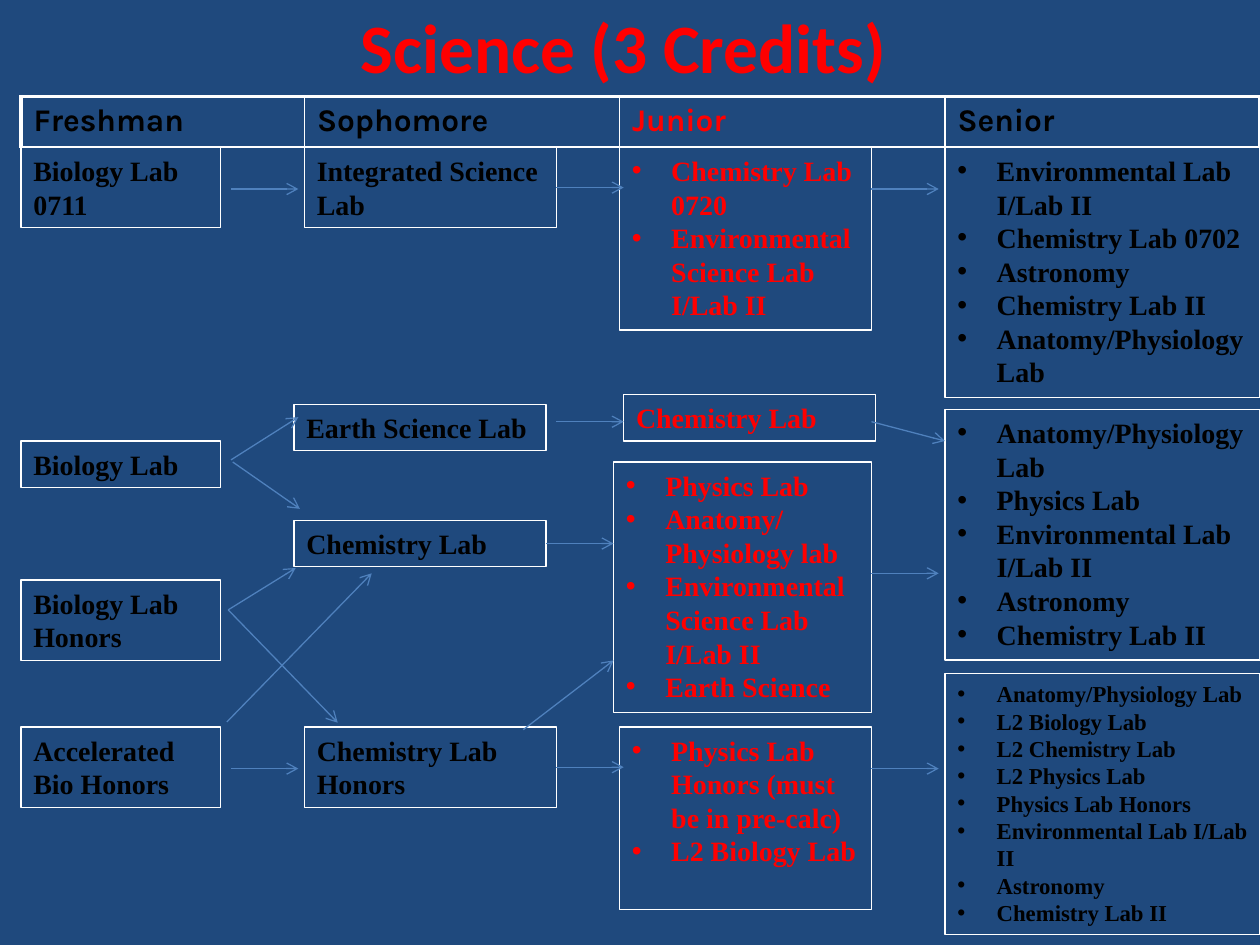
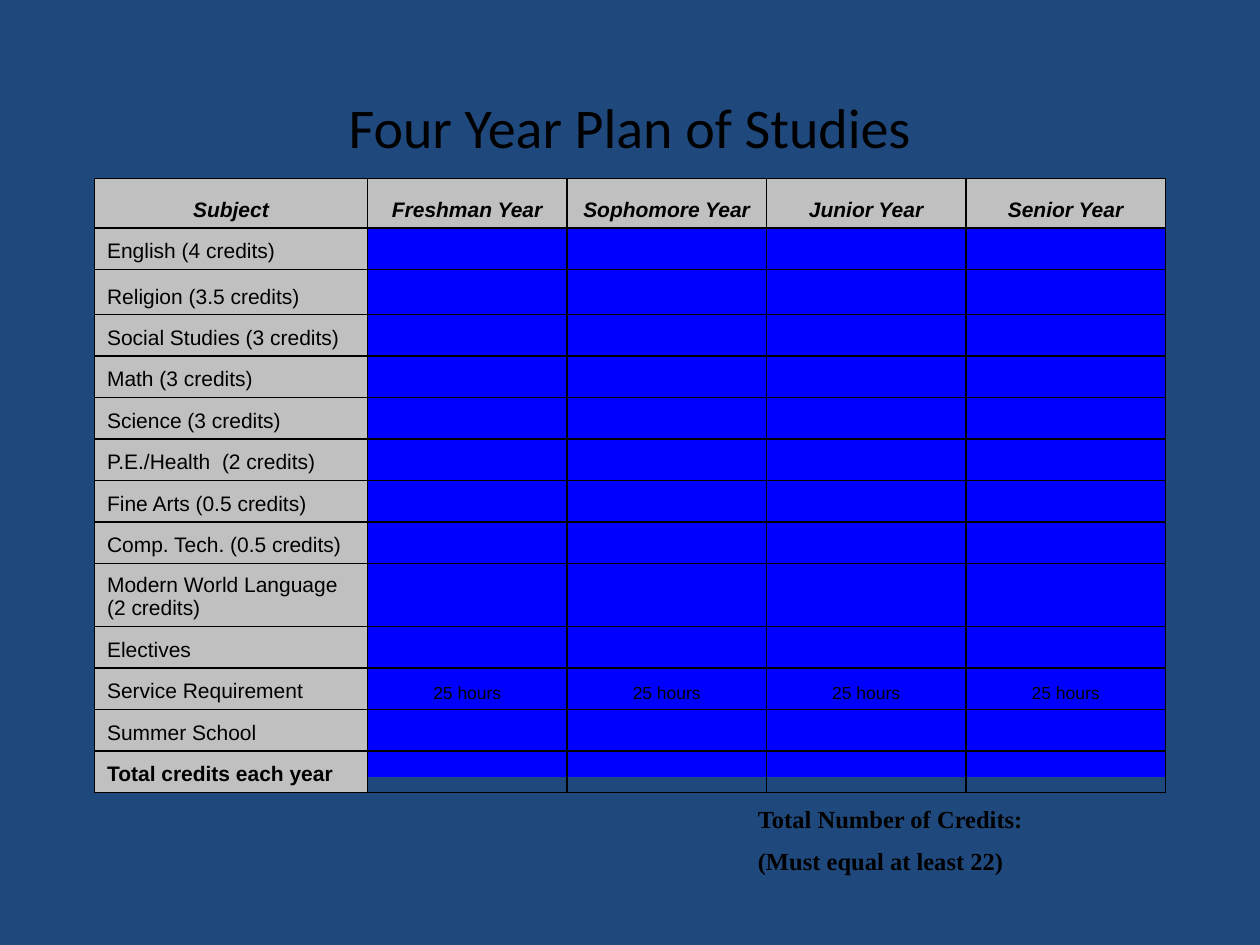
"""Build two course-planning slides: the science pathway and the four-year plan."""
from dataclasses import dataclass, replace
from typing import NamedTuple, Optional

from lxml import etree
from pptx import Presentation
from pptx import util as u
from pptx.dml.color import RGBColor
from pptx.enum import shapes, text
from pptx.oxml.ns import qn

NAVY, BLUE, STEEL, SILVER = "1F497D", "0000FF", "4F81BD", "C0C0C0"
RED, BLACK, WHITE = "FF0000", "000000", "FFFFFF"
LEFT, CENTER = text.PP_ALIGN.LEFT, text.PP_ALIGN.CENTER
TOP, MIDDLE, BOTTOM = (text.MSO_ANCHOR.TOP, text.MSO_ANCHOR.MIDDLE,
                       text.MSO_ANCHOR.BOTTOM)


@dataclass(frozen=True)
class Style:
    """Font settings of a run."""
    font: str
    size: float
    color: str = BLACK
    bold: bool = False
    italic: bool = False


class Course(NamedTuple):
    """A bordered box listing one or more courses."""
    key: str
    left: float
    top: float
    width: float
    height: float
    lines: list[str]
    style: Style
    bullets: bool = False


class Arrow(NamedTuple):
    """An arrow, optionally leaving the right side of a course box."""
    x1: float
    y1: float
    x2: float
    y2: float
    source: Optional[str] = None


COURSE = Style("Times New Roman", 16, bold=True)
JUNIOR = replace(COURSE, color=RED)
SMALL = replace(COURSE, size=13)
GRADE = Style("Karla", 18, bold=True)
TOTAL = replace(COURSE, size=14)
SUBJECT = Style("Arial", 12)
HEADING = replace(SUBJECT, bold=True, italic=True)
HOURS = replace(SUBJECT, size=10)

ONE, TWO, TALL = 26.6, 46, 143.2
ROW_1, ROW_4 = 84.2, 415.4
COURSES = [
    Course("bio", 12, 252, 114, ONE, ["Biology Lab"], COURSE),
    Course("bio honors", 12, 331.4, 114, TWO, ["Biology Lab Honors"], COURSE),
    Course("bio 0711", 12, ROW_1, 114, TWO, ["Biology Lab 0711"], COURSE),
    Course("accelerated", 12, ROW_4, 114, TWO,
           ["Accelerated", "Bio Honors"], COURSE),
    Course("integrated", 174, ROW_1, 144, TWO,
           ["Integrated Science Lab"], COURSE),
    Course("earth", 168, 231, 144, ONE, ["Earth Science Lab"], COURSE),
    Course("chem", 168, 297.3, 144, ONE, ["Chemistry Lab"], COURSE),
    Course("chem honors", 174, ROW_4, 144, TWO,
           ["Chemistry Lab", "Honors"], COURSE),
    Course("junior 1", 354, ROW_1, 144, 104.4,
           ["Chemistry Lab 0720", "Environmental Science Lab I/Lab II"],
           JUNIOR, True),
    Course("junior 2", 356.4, 225.4, 144, ONE, ["Chemistry Lab"], JUNIOR),
    Course("junior 3", 350.6, 264, 147.6, TALL,
           ["Physics Lab", "Anatomy/Physiology lab",
            "Environmental Science Lab I/Lab II", "Earth Science"],
           JUNIOR, True),
    Course("junior 4", 354, ROW_4, 144, 104.4,
           ["Physics Lab Honors (must be in pre-calc)", "L2 Biology Lab"],
           JUNIOR, True),
    Course("senior 1", 540, ROW_1, 180, TALL,
           ["Environmental Lab I/Lab II", "Chemistry Lab 0702", "Astronomy",
            "Chemistry Lab II", "Anatomy/Physiology Lab"], COURSE, True),
    Course("senior 2", 540, 234, 180, TALL,
           ["Anatomy/Physiology Lab", "Physics Lab",
            "Environmental Lab I/Lab II", "Astronomy", "Chemistry Lab II"],
           COURSE, True),
    Course("senior 3", 540, 385, 180, 149,
           ["Anatomy/Physiology Lab", "L2 Biology Lab", "L2 Chemistry Lab",
            "L2 Physics Lab", "Physics Lab Honors",
            "Environmental Lab I/Lab II", "Astronomy", "Chemistry Lab II"],
           SMALL, True),
]
ARROWS = [
    Arrow(132, 108, 170.5, 108),
    Arrow(318, 107.2, 356.4, 107.2, "integrated"),
    Arrow(498, 108, 536.4, 108),
    Arrow(132, 439.2, 170.5, 439.2),
    Arrow(318, 438.4, 356.4, 438.4, "chem honors"),
    Arrow(498, 439.2, 536.4, 439.2),
    Arrow(132, 262.8, 170.5, 238.4),
    Arrow(133, 264, 171.4, 290.8),
    Arrow(318, 241, 356.4, 241),
    Arrow(498, 241, 540, 252),
    Arrow(498, 327.6, 536.4, 327.6),
    Arrow(312, 310.6, 350.6, 310.6, "chem"),
    Arrow(130.4, 348.5, 169, 324.6),
    Arrow(130.4, 348.5, 193, 413),
    Arrow(129.6, 412.6, 212.4, 327.6),
    Arrow(299, 417, 350.6, 377.4),
]
GRADES = ["Freshman", "Sophomore", "Junior", "Senior"]
SUBJECTS = [
    "English (4 credits)", "Religion (3.5 credits)",
    "Social Studies (3 credits)", "Math (3 credits)", "Science (3 credits)",
    "P.E./Health  (2 credits)", "Fine Arts (0.5 credits)",
    "Comp. Tech. (0.5 credits)", "Modern World Language (2 credits)",
    "Electives", "Service Requirement", "Summer School",
    "Total credits each year",
]
ROW_HEIGHTS = {0: 28.2, 2: 26, 9: 36}


def rgb(color: str) -> RGBColor:
    """Turn a hex string into a colour."""
    return RGBColor.from_string(color)


def pts(*values: float) -> list[u.Pt]:
    """Turn numbers into point lengths."""
    return [u.Pt(v) for v in values]


def add_bullet(p) -> None:
    """Give a paragraph a hanging round bullet."""
    pPr = p._p.get_or_add_pPr()
    pPr.set("marL", str(u.Pt(22.5)))
    pPr.set("indent", str(-u.Pt(22.5)))
    etree.SubElement(pPr, qn("a:buFont")).set("typeface", "Arial")
    etree.SubElement(pPr, qn("a:buChar")).set("char", "•")


def write(tf, lines: list[str], style: Style, align=LEFT,
          bullets: bool = False, gap: float = 0) -> None:
    """Fill a text frame with one styled run per paragraph."""
    for i, line in enumerate(lines):
        p = tf.add_paragraph() if i else tf.paragraphs[0]
        p.alignment = align
        if i and gap:
            p.space_before = u.Pt(gap)
        if bullets:
            add_bullet(p)
        r = p.add_run()
        r.text = line
        f = r.font
        f.name, f.size = style.font, u.Pt(style.size)
        f.bold, f.italic = style.bold, style.italic
        f.color.rgb = rgb(style.color)


def add_slide(prs):
    """Add a blank slide with the shared background."""
    s = prs.slides.add_slide(prs.slide_layouts[6])
    s.background.fill.solid()
    s.background.fill.fore_color.rgb = rgb(NAVY)
    return s


def add_text(s, box: tuple, lines: list[str], style: Style, align=LEFT,
             anchor=TOP, gap: float = 0) -> None:
    """Add a wrapping text box."""
    tf = s.shapes.add_textbox(*pts(*box)).text_frame
    tf.word_wrap, tf.vertical_anchor = True, anchor
    write(tf, lines, style, align, gap=gap)


def add_title(s, box: tuple, title: str, style: Style) -> None:
    """Add a centred slide title."""
    add_text(s, box, [title], style, CENTER, MIDDLE)


def add_rect(s, box: tuple):
    """Add a rectangle without a shadow."""
    sp = s.shapes.add_shape(shapes.MSO_SHAPE.RECTANGLE, *pts(*box))
    sp.shadow.inherit = False
    return sp


def add_course(s, c: Course):
    """Draw a course box."""
    sp = add_rect(s, (c.left, c.top, c.width, c.height))
    sp.fill.background()
    sp.line.color.rgb, sp.line.width = rgb(WHITE), u.Pt(0.75)
    tf = sp.text_frame
    tf.word_wrap, tf.vertical_anchor = True, TOP
    write(tf, c.lines, c.style, bullets=c.bullets)
    return sp


def add_arrow(s, a: Arrow, boxes: dict) -> None:
    """Draw an arrow between courses."""
    cx = s.shapes.add_connector(shapes.MSO_CONNECTOR.STRAIGHT,
                                *pts(a.x1, a.y1, a.x2, a.y2))
    if a.source:
        cx.begin_connect(boxes[a.source], 3)
    cx.line.color.rgb, cx.line.width = rgb(STEEL), u.Pt(0.75)
    etree.SubElement(cx.line._get_or_add_ln(), qn("a:tailEnd")).set(
        "type", "arrow")
    etree.SubElement(cx._element.spPr, qn("a:effectLst"))


def add_grid(s, left: float, top: float, widths: list[float],
             heights: list[float]):
    """Add a table without its default banding."""
    tbl = s.shapes.add_table(
        len(heights), len(widths),
        *pts(left, top, sum(widths), sum(heights))).table
    tbl.first_row = tbl.horz_banding = False
    for col, width in zip(tbl.columns, widths):
        col.width = u.Pt(width)
    for row, height in zip(tbl.rows, heights):
        row.height = u.Pt(height)
    return tbl


def fill_cell(cell, words: str, style: Style, border: str, align=LEFT,
              anchor=TOP, fill: Optional[str] = None,
              heavy: str = "") -> None:
    """Set the borders, fill and text of a cell; heavy names thick sides."""
    tcPr = cell._tc.get_or_add_tcPr()
    for side in "LRTB":
        width = u.Pt(2.25 if side in heavy else 1)
        ln = etree.SubElement(tcPr, qn(f"a:ln{side}"), w=str(width))
        paint = etree.SubElement(ln, qn("a:solidFill"))
        etree.SubElement(paint, qn("a:srgbClr")).set("val", border)
    if fill:
        cell.fill.solid()
        cell.fill.fore_color.rgb = rgb(fill)
    else:
        cell.fill.background()
    cell.vertical_anchor = anchor
    if words:
        write(cell.text_frame, [words], style, align)
    else:
        p = cell.text_frame.paragraphs[0]
        etree.SubElement(p._p, qn("a:endParaRPr")).set(
            "sz", str(int(style.size * 100)))


def build_science(prs) -> None:
    """Draw the science pathway."""
    s = add_slide(prs)
    add_title(s, (-3.6, -2.2, 720, 57), "Science (3 Credits)",
              Style("Calibri", 39.6, RED, bold=True))
    boxes = {c.key: add_course(s, c) for c in COURSES}
    for a in ARROWS:
        add_arrow(s, a, boxes)
    tbl = add_grid(s, 12, 55.2, [162, 180, 186, 180], [28.8])
    for i, grade in enumerate(GRADES):
        style = replace(GRADE, color=RED if grade == "Junior" else BLACK)
        heavy = "T" + {0: "L", 3: "R"}.get(i, "")
        fill_cell(tbl.cell(0, i), grade, style, WHITE, heavy=heavy)


def build_plan(prs) -> None:
    """Draw the four-year plan table."""
    s = add_slide(prs)
    panel = add_rect(s, (54, 102, 612, 342))
    panel.fill.solid()
    panel.fill.fore_color.rgb = rgb(BLUE)
    panel.line.fill.background()
    add_title(s, (54, 48, 612, 48), "Four Year Plan of Studies",
              Style("Calibri", 32))
    add_text(s, (426, 456, 246, 50),
             ["Total Number of Credits:", "(Must equal at least 22)"],
             TOTAL, gap=7)
    heights = [ROW_HEIGHTS.get(i, 23.7) for i in range(len(SUBJECTS) + 1)]
    tbl = add_grid(s, 54, 102, [156] + [114] * 4, heights)
    headings = ["Subject"] + [f"{grade} Year" for grade in GRADES]
    for j, heading in enumerate(headings):
        fill_cell(tbl.cell(0, j), heading, HEADING, BLACK, CENTER, BOTTOM,
                  SILVER)
    for i, subject in enumerate(SUBJECTS, 1):
        style = replace(SUBJECT, bold=subject.startswith("Total"))
        fill_cell(tbl.cell(i, 0), subject, style, BLACK, LEFT, BOTTOM, SILVER)
        hours = "25 hours" if subject.startswith("Service") else ""
        for j in range(1, len(headings)):
            fill_cell(tbl.cell(i, j), hours, HOURS, BLACK, CENTER, BOTTOM)


def main() -> None:
    """Build and save the presentation."""
    prs = Presentation()
    prs.slide_width, prs.slide_height = pts(720, 540)
    build_science(prs)
    build_plan(prs)
    prs.save("out.pptx")


if __name__ == "__main__":
    main()
